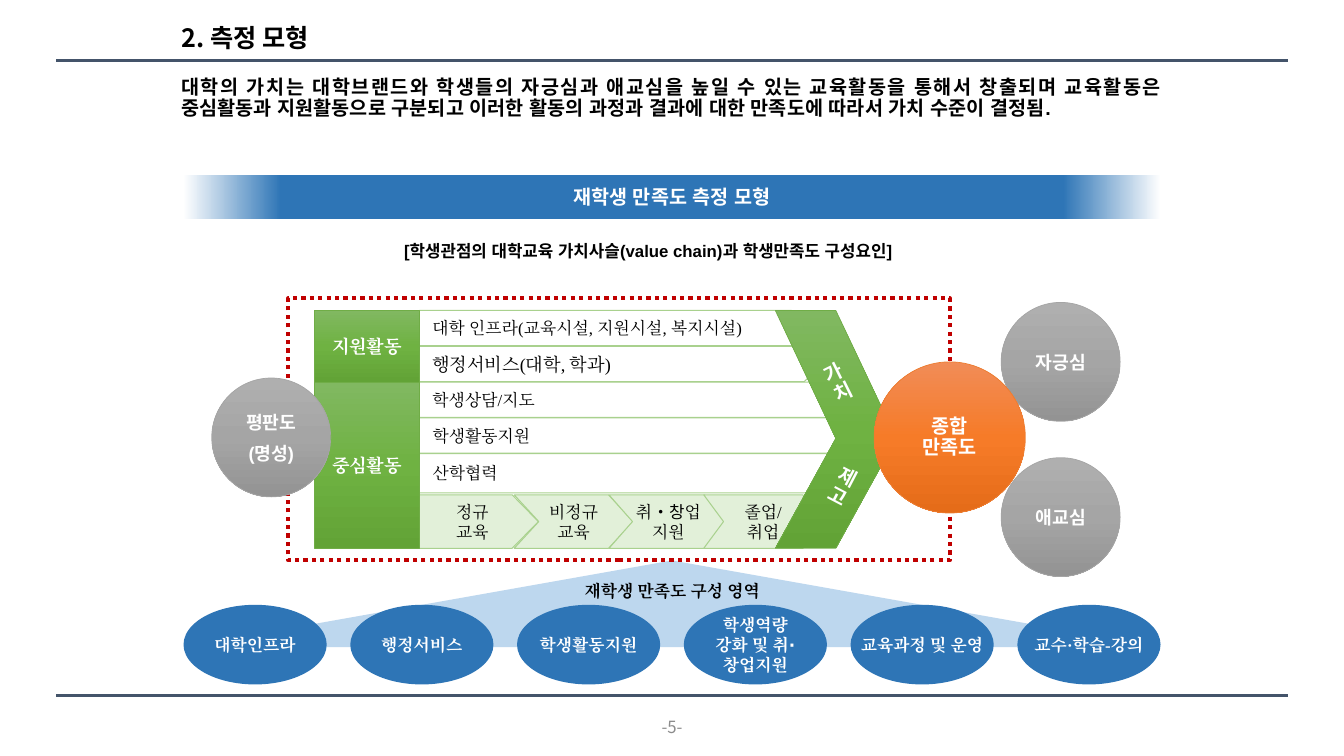
from pptx import Presentation
from pptx.dml.color import RGBColor
from pptx.enum.dml import MSO_LINE
from pptx.enum.shapes import MSO_CONNECTOR, MSO_SHAPE
from pptx.enum.text import MSO_ANCHOR, PP_ALIGN
from pptx.oxml.ns import qn
from pptx.util import Inches, Pt
from lxml import etree

OVAL, RECTANGLE = MSO_SHAPE.OVAL, MSO_SHAPE.RECTANGLE
PENTAGON, CHEVRON = MSO_SHAPE.PENTAGON, MSO_SHAPE.CHEVRON
LEFT, CENTER, JUSTIFY = PP_ALIGN.LEFT, PP_ALIGN.CENTER, PP_ALIGN.JUSTIFY
TOP, MIDDLE = MSO_ANCHOR.TOP, MSO_ANCHOR.MIDDLE

THEME = {
    "sans": "Arial", "serif": "Times New Roman", "korean": "Noto Sans CJK KR",
    "title": 18, "lead": 14, "label": 13, "small": 12,
    "black": "000000", "white": "FFFFFF", "muted": "8C8C8C",
    "rule": "44546A", "frame": "C00000", "blue": "2E75B6", "pale blue": "BDD7EE",
    "pale green": "E2F0D9", "green edge": "A9D18E", "green line": "70AD47",
    "gray line": "A5A5A5", "orange line": "ED7D31",
    "banner": ((0, "FFFFFF"), (10, "2E75B6"), (90, "2E75B6"), (100, "FFFFFF")),
    "gray": ((0, "AFAFAF"), (50, "A5A5A5"), (100, "939393")),
    "green": ((0, "81B861"), (50, "6FB242"), (100, "62A336")),
    "orange": ((0, "F18C57"), (50, "F67B28"), (100, "E56C19")),
}


def paint(shape, fill=None, line=None, width=0.5, angle=270):
    """Fill with a theme colour or gradient and draw the outline."""
    shape.shadow.inherit = False
    if fill is None:
        shape.fill.background()
    elif isinstance(THEME[fill], str):
        shape.fill.solid()
        shape.fill.fore_color.rgb = RGBColor.from_string(THEME[fill])
    else:
        shape.fill.gradient()
        shape.fill.gradient_angle = angle
        stops = shape._element.spPr.find(qn("a:gradFill")).find(qn("a:gsLst"))
        stops.clear()
        for position, color in THEME[fill]:
            stop = etree.SubElement(stops, qn("a:gs"), pos=str(position * 1000))
            etree.SubElement(stop, qn("a:srgbClr"), val=color)
    if line is None:
        shape.line.fill.background()
    else:
        shape.line.color.rgb = RGBColor.from_string(THEME[line])
        shape.line.width = Pt(width)


def write(shape, lines, font, size, color="white", bold=True, align=CENTER,
          anchor=MIDDLE, wrap=False, inset=0.04, spacing=None, before=0):
    """Write paragraphs; a bar parts runs, every second run in the Korean font."""
    frame = shape.text_frame
    frame.word_wrap, frame.vertical_anchor = wrap, anchor
    frame.margin_left = frame.margin_right = Inches(inset)
    frame.margin_top = frame.margin_bottom = Inches(min(inset, 0.05))
    for number, line in enumerate(lines):
        paragraph = frame.add_paragraph() if number else frame.paragraphs[0]
        paragraph.alignment = align
        paragraph.line_spacing = spacing
        paragraph.space_before = Pt(before if number else 0)
        for index, text in enumerate(line.split("|")):
            run = paragraph.add_run()
            run.text = text
            run.font.size, run.font.bold = Pt(THEME[size]), bold
            run.font.color.rgb = RGBColor.from_string(THEME[color])
            run.font.name = THEME["korean" if index % 2 else font]
            etree.SubElement(run.font._element, qn("a:ea"), typeface=run.font.name)


presentation = Presentation()
presentation.slide_width, presentation.slide_height = Inches(13.33), Inches(7.5)
slide = presentation.slides.add_slide(presentation.slide_layouts[6])
shapes = slide.shapes

# Header and footer rules
for y in (0.6, 6.9):
    rule = shapes.add_connector(MSO_CONNECTOR.STRAIGHT, Inches(0.56), Inches(y),
                                Inches(12.77), Inches(y))
    rule.line.color.rgb = RGBColor.from_string(THEME["rule"])
    rule.line.width = Pt(2)
    etree.SubElement(rule._element.spPr, qn("a:effectLst"))

# Title, lead text, page number and caption
lead = ("대학의 가치는 대학브랜드와 학생들의 자긍심과 애교심을 높일 수 있는 교육활동을 통해서 "
        "창출되며 교육활동은 중심활동과 지원활동으로 구분되고 이러한 활동의 과정과 결과에 대한 "
        "만족도에 따라서 가치 수준이 결정됨.")
caption = "[학생관점의 대학교육 가치사슬(value chain)과 학생만족도 구성요인]"
for box, text, font, size, color, bold, align, anchor, wrap, spacing in (
    ((1.7, 0.21, 1.6, 0.37), "2. 측정 모형", "korean", "title", "black", True, LEFT, MIDDLE, True, 0.9),
    ((1.7, 0.72, 9.92, 0.74), lead, "sans", "lead", "black", True, JUSTIFY, TOP, True, 0.9),
    ((6.39, 7.06, 0.55, 0.3), "-5-", "korean", "small", "muted", False, CENTER, MIDDLE, False, None),
    ((3.91, 2.34, 5.51, 0.3), caption, "sans", "small", "black", True, LEFT, TOP, True, None),
):
    text_box = shapes.add_textbox(*map(Inches, box))
    write(text_box, [text], font, size, color, bold, align, anchor, wrap, 0.1, spacing)

# Banner
MODEL_LEFT, MODEL_WIDTH = 1.82, 9.69
banner = shapes.add_shape(RECTANGLE, *map(Inches, (MODEL_LEFT, 1.74, MODEL_WIDTH, 0.43)))
paint(banner, "banner", angle=0)
write(banner, ["재학생 만족도 측정 모형"], "sans", "lead", wrap=True)

# Wide arrowhead that joins the model to its areas
pointer = shapes.add_shape(MSO_SHAPE.DOWN_ARROW,
                           *map(Inches, (MODEL_LEFT, 5.56, MODEL_WIDTH, 0.86)))
pointer.rotation = 180
pointer.adjustments[0], pointer.adjustments[1] = 0.767, 1
paint(pointer, "pale blue")
pointer_label = shapes.add_textbox(*map(Inches, (5.57, 5.71, 2.2, 0.3)))
write(pointer_label, ["재학생 만족도 구성 영역"], "serif", "small", "black")

# Six satisfaction areas
AREA_WIDTH = 1.42
area_pitch = (MODEL_WIDTH - AREA_WIDTH) / 5
areas = (["대학인프라"], ["행정서비스"], ["학생활동지원"],
         ["학생역량", "강화 및 취|∙|창업지원"], ["교육과정 및 운영"], ["교수·학습-강의"])
for column, lines in enumerate(areas):
    area = shapes.add_shape(OVAL, *map(Inches, (MODEL_LEFT + column * area_pitch, 6, AREA_WIDTH, 0.79)))
    paint(area, "blue")
    write(area, lines, "serif", "small", wrap=len(lines) > 1)

# Dotted frame
frame_box = shapes.add_shape(RECTANGLE, *map(Inches, (2.86, 2.96, 6.56, 2.6)))
paint(frame_box, None, "frame", 3)
frame_box.line.dash_style = MSO_LINE.ROUND_DOT

# Activity rows
CHAIN_LEFT, CHAIN_TOP, ROW_PITCH = 4.16, 3.08, 0.355
activities = (
    ("대학 인프라(교육시설, 지원시설, 복지시설)", 3.87, 0.35, 0.51, "small"),
    ("행정서비스(대학, 학과)", 4, 0.35, 0.52, "label"),
    ("학생상담/지도", 4.24, 0.35, 0.55, "small"),
    ("학생활동지원", 4.32, 0.35, 0.59, "small"),
    ("산학협력", 4.32, 0.39, 0.4, "small"),
)
for row, (text, width, height, point, size) in enumerate(activities):
    activity = shapes.add_shape(PENTAGON, *map(Inches, (CHAIN_LEFT, CHAIN_TOP + row * ROW_PITCH, width, height)))
    activity.adjustments[0] = point
    paint(activity, None, "green edge", 0.75)
    write(activity, [text], "serif", size, "black", False, LEFT)
    activity.text_frame.margin_left = Inches(0.13)

# Education steps
steps = ((PENTAGON, 0.49, ["정규", "교육"]), (CHEVRON, 0.46, ["비정규", "교육"]),
         (CHEVRON, 0.44, ["취|•창|업", "지원"]), (CHEVRON, 0.37, ["졸업/", "취업"]))
for column, (kind, point, lines) in enumerate(steps):
    step = shapes.add_shape(kind, *map(Inches, (CHAIN_LEFT + column * 0.94, 4.91, 1.18, 0.53)))
    step.adjustments[0] = point
    paint(step, "pale green", "green edge", 0.75)
    write(step, lines, "serif", "small", "black", False)

# Green arrow and activity headings
arrow_points = [(Inches(x), Inches(y)) for x, y in
                ((7.69, 3.08), (8.29, 3.08), (8.89, 4.35), (8.29, 5.44), (7.69, 5.44), (8.29, 4.35))]
builder = shapes.build_freeform(*arrow_points[0], scale=1.0)
builder.add_line_segments(arrow_points[1:], close=True)
paint(builder.convert_to_shape(), "green", "green line")
for text, top, height in (("지원활동", 3.08, 0.71), ("중심활동", 3.79, 1.65)):
    heading = shapes.add_shape(RECTANGLE, *map(Inches, (3.12, top, 1.04, height)))
    paint(heading, "green", "green line")
    write(heading, [text], "serif", "label")

# Circles around the chain
for lines, left, top in ((["자긍심"], 9.93, 3), (["애교심"], 9.93, 4.54), (["평판도", "(명성)"], 2.1, 3.75)):
    circle = shapes.add_shape(OVAL, *map(Inches, (left, top, 1.18, 1.18)))
    paint(circle, "gray", "gray line")
    write(circle, lines, "sans", "label", before=6.5)
overall = shapes.add_shape(OVAL, *map(Inches, (8.67, 3.59, 1.5, 1.5)))
paint(overall, "orange", "orange line")
write(overall, ["종합", "만족도"], "korean", "lead", wrap=True, spacing=0.9)

# Slanted words on the green arrow
for lines, left, top, angle in ((["가", "치"], 8.13, 3.51, 333.6), (["제", "고"], 8.17, 4.56, 27.7)):
    slanted = shapes.add_textbox(*map(Inches, (left, top, 0.4, 0.57)))
    slanted.rotation = angle
    write(slanted, lines, "korean", "lead", align=LEFT, inset=0.1, spacing=0.9)

presentation.save("out.pptx")
